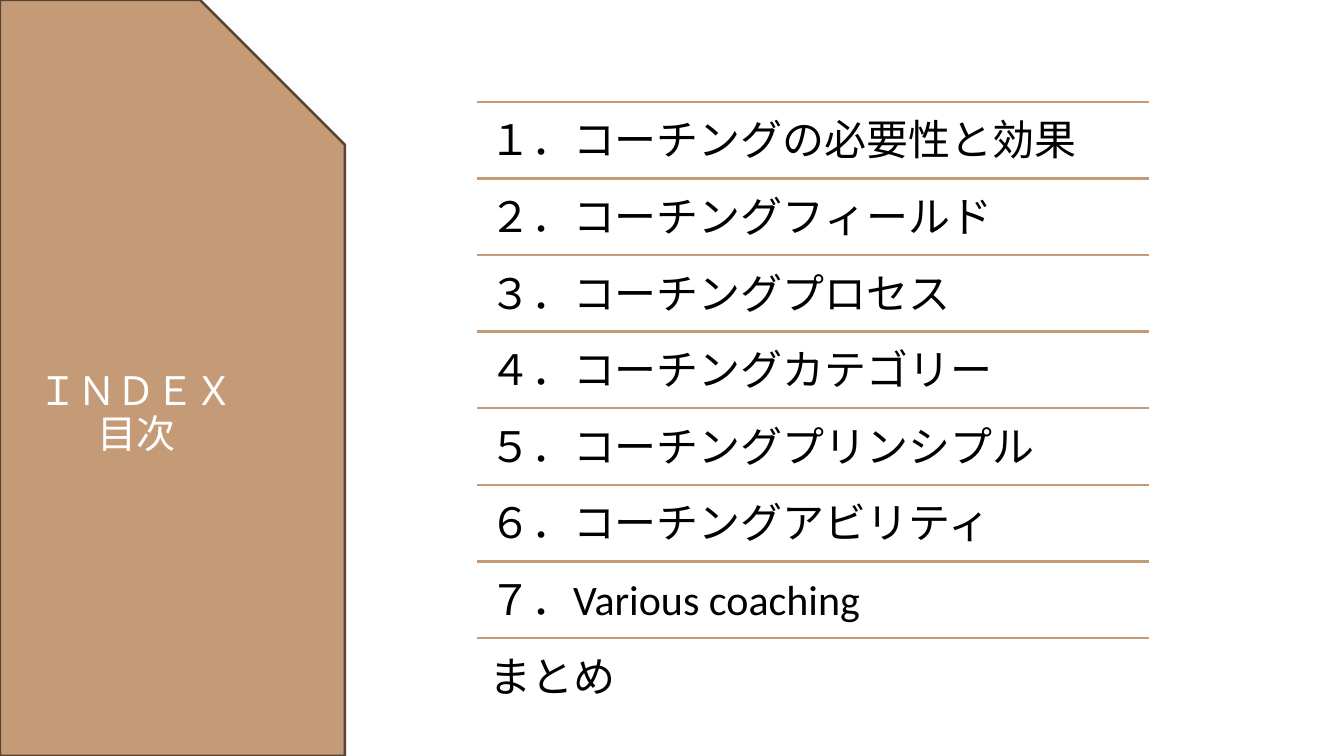
from pptx import Presentation
from pptx.dml.color import RGBColor
from pptx.enum.shapes import MSO_CONNECTOR, MSO_SHAPE
from pptx.enum.text import MSO_ANCHOR, MSO_AUTO_SIZE, PP_ALIGN
from pptx.oxml.ns import qn
from pptx.util import Inches, Pt
from lxml.etree import SubElement

COLORS = {name: RGBColor.from_string(value) for name, value in {
    "tan": "C49A77", "brown": "564334", "white": "FFFFFF", "black": "000000"}.items()}
FONT = "Calibri"
CHAPTERS = [
    "１．コーチングの必要性と効果",
    "２．コーチングフィールド",
    "３．コーチングプロセス",
    "４．コーチングカテゴリー",
    "５．コーチングプリンシプル",
    "６．コーチングアビリティ",
    "７．Various coaching",
    "まとめ",
]

# Grid in inches
PANEL_WIDTH, SNIP = 3.42, 0.42
LIST_LEFT, LIST_TOP, LIST_WIDTH, ROW = 4.73, 1.01, 6.67, 0.76
TEXT_RISE = 0.14  # exact line spacing sets the text low in its row


def fill_placeholder(placeholder, box, lines, size, color):
    placeholder.left, placeholder.top, placeholder.width, placeholder.height = map(Inches, box)
    frame = placeholder.text_frame
    frame.text = "\n".join(lines)
    frame.word_wrap = True
    frame.auto_size = MSO_AUTO_SIZE.NONE
    frame.margin_top = frame.margin_bottom = 0
    for paragraph in frame.paragraphs:
        paragraph.space_before = paragraph.space_after = Pt(0)
        paragraph.font.name = FONT
        paragraph.font.size = Pt(size)
        paragraph.font.color.rgb = COLORS[color]
    return frame


deck = Presentation()
deck.slide_width, deck.slide_height = Inches(13.33), Inches(7.5)
slide = deck.slides.add_slide(deck.slide_layouts[1])
heading, chapter_list = slide.placeholders

# Side panel, behind the heading
panel = slide.shapes.add_shape(MSO_SHAPE.SNIP_1_RECTANGLE, 0, 0,
                               Inches(PANEL_WIDTH), deck.slide_height)
panel.adjustments[0] = SNIP
panel.shadow.inherit = False
panel.fill.solid()
panel.fill.fore_color.rgb = COLORS["tan"]
panel.line.color.rgb = COLORS["brown"]
panel.line.width = Pt(1.75)
heading._element.addprevious(panel._element)

# Heading, centred in the part of the panel clear of the snipped corner
inset = PANEL_WIDTH * SNIP / 2
heading_frame = fill_placeholder(heading, (0, inset, PANEL_WIDTH - inset, 7.5 - inset),
                                 ["ＩＮＤＥＸ", "目次"], 28, "white")
heading_frame.vertical_anchor = MSO_ANCHOR.MIDDLE
for paragraph in heading_frame.paragraphs:
    paragraph.alignment = PP_ALIGN.CENTER
    paragraph.line_spacing = 0.9

# Chapter list, one line per row
list_frame = fill_placeholder(
    chapter_list, (LIST_LEFT, LIST_TOP - TEXT_RISE, LIST_WIDTH, ROW * len(CHAPTERS)),
    CHAPTERS, 30, "black")
list_frame.margin_left = list_frame.margin_right = Inches(0.12)
list_frame.vertical_anchor = MSO_ANCHOR.TOP
for paragraph in list_frame.paragraphs:
    paragraph.line_spacing = Pt(ROW * 72)
    properties = paragraph._p.get_or_add_pPr()
    properties.set("marL", "0")
    properties.set("indent", "0")
    SubElement(properties, qn("a:buNone"))

# Rule above each row
for row in range(len(CHAPTERS)):
    y = Inches(LIST_TOP + row * ROW)
    rule = slide.shapes.add_connector(MSO_CONNECTOR.STRAIGHT, Inches(LIST_LEFT), y,
                                      Inches(LIST_LEFT + LIST_WIDTH), y)
    rule.line.color.rgb = COLORS["tan"]
    rule.line.width = Pt(1.75)
    SubElement(rule._element.spPr, qn("a:effectLst"))

deck.save("out.pptx")
